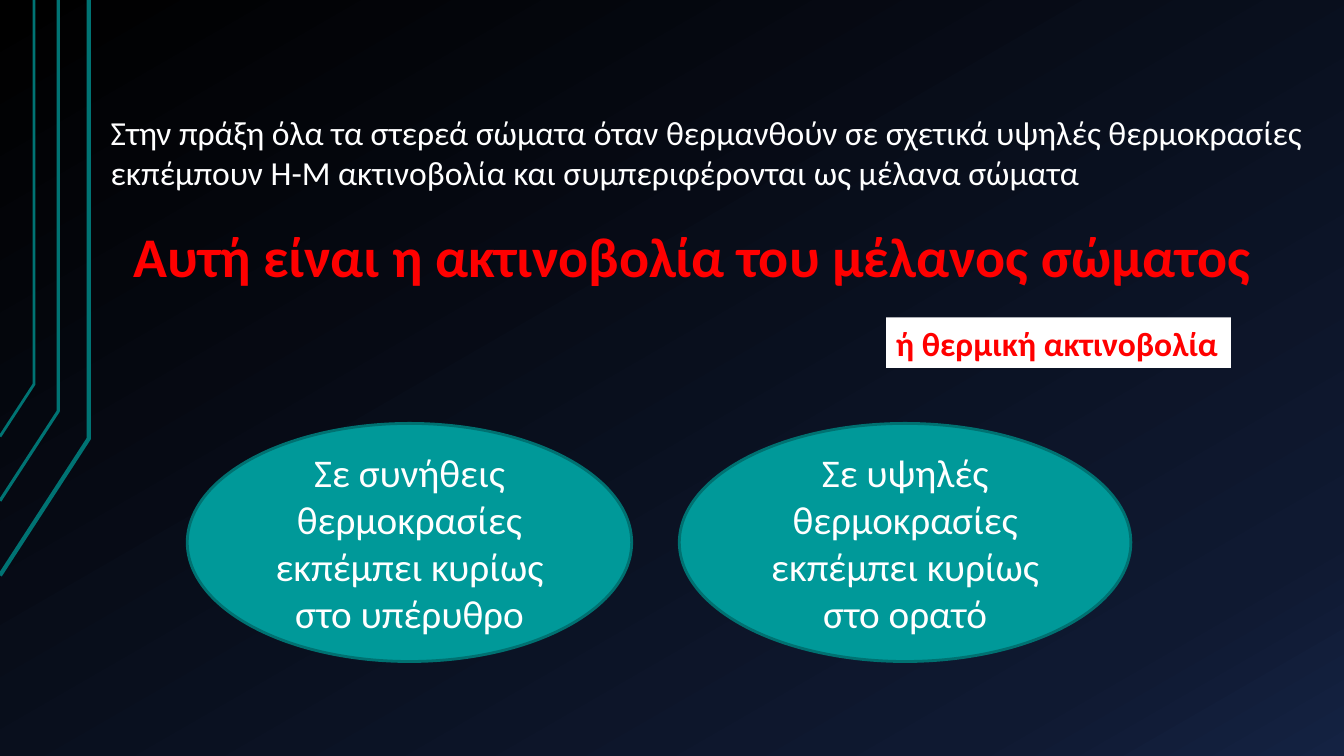
import copy
from dataclasses import dataclass

import pptx
import pptx.dml.color
import pptx.enum.shapes
import pptx.enum.text
import pptx.oxml.ns
import pptx.util

Cm = pptx.util.Cm
Pt = pptx.util.Pt
Shape = pptx.enum.shapes.MSO_SHAPE
Align = pptx.enum.text.PP_ALIGN
Anchor = pptx.enum.text.MSO_ANCHOR
Fit = pptx.enum.text.MSO_AUTO_SIZE


@dataclass(frozen=True)
class Theme:
    font: str = "Calibri"
    white: str = "FFFFFF"
    red: str = "FF0000"
    teal: str = "009999"
    edge: str = "007171"
    trace: str = "007373"
    back: tuple = ((0, "000000"), (85, "0F1931"), (100, "142242"))
    body: int = 24
    oval: int = 28
    head: int = 40


THEME = Theme()


def rgb(code):
    return pptx.dml.color.RGBColor.from_string(code)


def paint_back(slide):
    fill = slide.background.fill
    fill.gradient()
    fill.gradient_angle = 300
    first = fill.gradient_stops[0]
    stops = slide.background._cSld.find(".//" + pptx.oxml.ns.qn("a:gsLst"))
    stops.insert(1, copy.deepcopy(stops[0]))
    for stop, (place, code) in zip(fill.gradient_stops, THEME.back):
        stop.position = place / 100
        stop.color.rgb = rgb(code)


def draw_traces(slide):
    """Draw the bent lines that run from the top edge to the left edge."""
    for x, bend, foot, width in (
        (2.24, 11.05, 14.5, 3),
        (1.47, 10.36, 12.62, 2.25),
        (0.86, 9.68, 11, 2),
    ):
        path = slide.shapes.build_freeform(Cm(0), Cm(foot))
        path.add_line_segments([(Cm(x), Cm(bend)), (Cm(x), Cm(0))], close=False)
        trace = path.convert_to_shape()
        trace.shadow.inherit = False
        trace.fill.background()
        trace.line.color.rgb = rgb(THEME.trace)
        trace.line.width = Pt(width)


def write(shape, text, size, color, bold=False, align=Align.LEFT):
    frame = shape.text_frame
    frame.word_wrap = True
    frame.text = text
    para = frame.paragraphs[0]
    para.alignment = align
    para.font.name = THEME.font
    para.font.size = Pt(size)
    para.font.bold = bold
    para.font.color.rgb = rgb(color)
    return frame


def add_text(slide, box, text, size, color, bold=False):
    shape = slide.shapes.add_textbox(*map(Cm, box))
    write(shape, text, size, color, bold).auto_size = Fit.SHAPE_TO_FIT_TEXT


def add_tag(slide, box, text):
    tag = slide.shapes.add_shape(Shape.RECTANGLE, *map(Cm, box))
    tag.shadow.inherit = False
    tag.fill.solid()
    tag.fill.fore_color.rgb = rgb(THEME.white)
    tag.line.fill.background()
    frame = write(tag, text, THEME.body, THEME.red, True)
    frame.word_wrap = False
    frame.vertical_anchor = Anchor.TOP
    frame.auto_size = Fit.SHAPE_TO_FIT_TEXT


def add_oval(slide, box, text):
    oval = slide.shapes.add_shape(Shape.OVAL, *map(Cm, box))
    oval.shadow.inherit = False
    oval.fill.solid()
    oval.fill.fore_color.rgb = rgb(THEME.teal)
    oval.line.color.rgb = rgb(THEME.edge)
    oval.line.width = Pt(2)
    frame = write(oval, text, THEME.oval, THEME.white, align=Align.CENTER)
    frame.vertical_anchor = Anchor.MIDDLE


def main():
    deck = pptx.Presentation()
    deck.slide_width, deck.slide_height = Cm(33.87), Cm(19.05)
    slide = deck.slides.add_slide(deck.slide_layouts[6])
    paint_back(slide)
    draw_traces(slide)
    add_text(
        slide, (2.54, 2.69, 30.81, 2.31),
        "Στην πράξη όλα τα στερεά σώματα όταν θερμανθούν σε σχετικά υψηλές "
        "θερμοκρασίες εκπέμπουν Η-Μ ακτινοβολία και συμπεριφέρονται ως "
        "μέλανα σώματα",
        THEME.body, THEME.white,
    )
    add_text(
        slide, (3.12, 5.46, 29.79, 1.96),
        "Αυτή είναι η ακτινοβολία του μέλανος σώματος",
        THEME.head, THEME.red, True,
    )
    add_tag(slide, (22.33, 8, 8.69, 1.27), "ή θερμική ακτινοβολία")
    for left, width, text in (
        (4.72, 11.2, "Σε συνήθεις θερμοκρασίες εκπέμπει κυρίως στο υπέρυθρο"),
        (17.12, 11.38, "Σε υψηλές θερμοκρασίες εκπέμπει κυρίως στο ορατό"),
    ):
        add_oval(slide, (left, 10.67, width, 6), text)
    deck.save("out.pptx")


if __name__ == "__main__":
    main()
